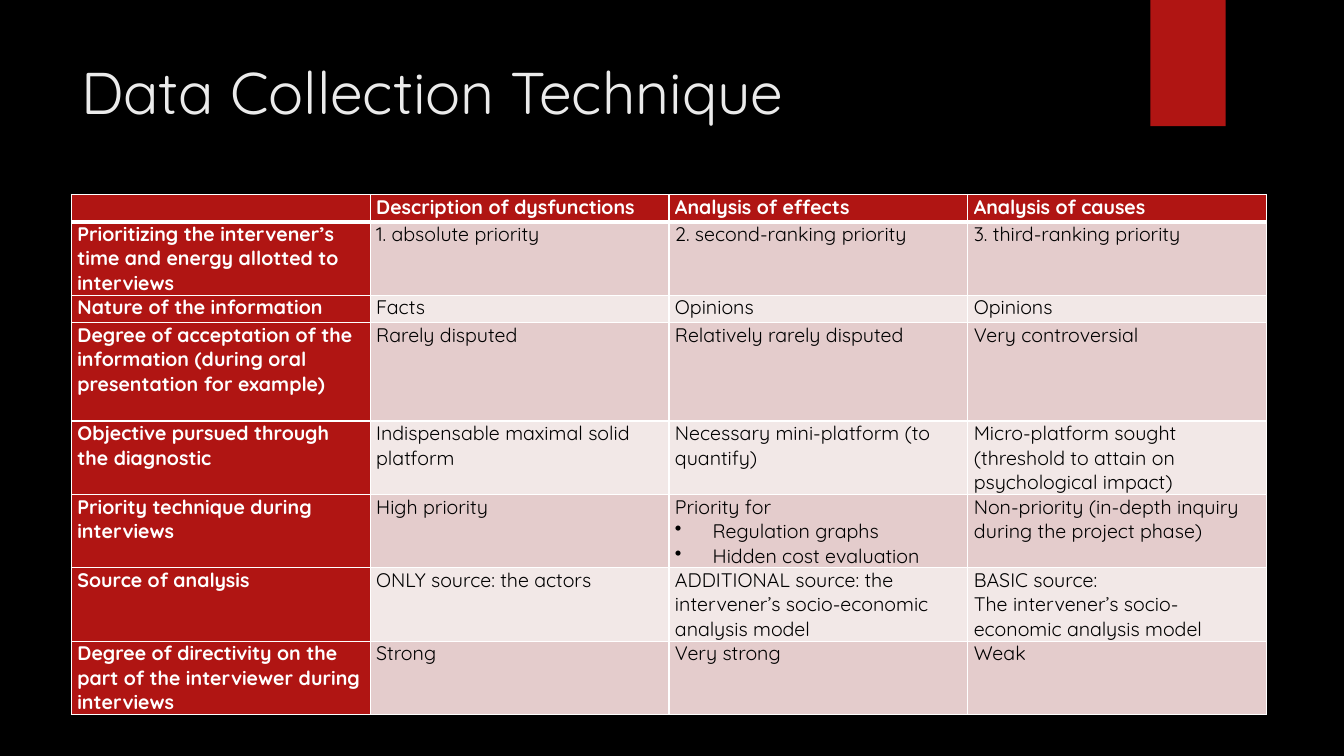
"""Builds the data collection technique slide."""
from lxml import etree
from pptx import Presentation
from pptx import util as u
from pptx.dml.color import RGBColor
from pptx.enum import shapes, text
from pptx.oxml import ns

FONT = "Quicksand"
RED, WHITE = "B01513", "FFFFFF"
BANDS = ("E4CCCC", "F2E8E7")
BULLET = "• "
ROW_HEIGHTS = (0.69, 1.85, 0.69, 2.48, 1.85, 1.85, 1.85, 1.85)
ROWS = (
    ("", "Description of dysfunctions", "Analysis of effects", "Analysis of causes"),
    ("Prioritizing the intervener’s time and energy allotted to interviews",
     "1. absolute priority", "2. second-ranking priority", "3. third-ranking priority"),
    ("Nature of the information", "Facts", "Opinions", "Opinions"),
    ("Degree of acceptation of the information (during oral presentation for example)",
     "Rarely disputed", "Relatively rarely disputed", "Very controversial"),
    ("Objective pursued through the diagnostic", "Indispensable maximal solid platform",
     "Necessary mini-platform (to quantify)",
     "Micro-platform sought (threshold to attain on psychological impact)"),
    ("Priority technique during interviews", "High priority",
     "Priority for\n• Regulation graphs\n• Hidden cost evaluation",
     "Non-priority (in-depth inquiry during the project phase)"),
    ("Source of analysis", "ONLY source: the actors",
     "ADDITIONAL source: the intervener’s socio-economic analysis model",
     "BASIC source:\nThe intervener’s socio-economic analysis model"),
    ("Degree of directivity on the part of the interviewer during interviews",
     "Strong", "Very strong", "Weak"),
)


def paint(fill, color):
    """Give a fill one solid colour."""
    fill.solid()
    fill.fore_color.rgb = RGBColor.from_string(color)


def add_run(p, words, size, color, bold=False):
    """Add one formatted run to a paragraph."""
    r = p.add_run()
    r.text = words
    r.font.name, r.font.size, r.font.bold = FONT, u.Pt(size), bold
    r.font.color.rgb = RGBColor.from_string(color)


def add_bullet(p):
    """Give a paragraph a hanging bullet."""
    pPr = p._p.get_or_add_pPr()
    pPr.set("marL", str(u.Cm(0.95)))
    pPr.set("indent", str(u.Cm(-0.95)))
    etree.SubElement(pPr, ns.qn("a:buChar"), char="•")


def add_borders(cell, top, bottom):
    """Draw white borders round a cell, with top and bottom widths in points."""
    tcPr = cell._tc.get_or_add_tcPr()
    for side, width in (("L", 1), ("R", 1), ("T", top), ("B", bottom)):
        ln = etree.SubElement(tcPr, ns.qn(f"a:ln{side}"), w=str(u.Pt(width)))
        solid = etree.SubElement(ln, ns.qn("a:solidFill"))
        etree.SubElement(solid, ns.qn("a:srgbClr"), val=WHITE)


def fill_cell(cell, words, row, col):
    """Write and style one table cell."""
    heading = row == 0 or col == 0
    add_borders(cell, 3 if row == 1 else 1, 3 if row == 0 else 1)
    paint(cell.fill, RED if heading else BANDS[(row - 1) % 2])
    cell.margin_left = cell.margin_right = u.Cm(0.15)
    cell.margin_top = cell.margin_bottom = 0
    tf = cell.text_frame
    if not words:
        etree.SubElement(tf.paragraphs[0]._p, ns.qn("a:endParaRPr"), sz="1400")
        return
    for i, line in enumerate(words.split("\n")):
        p = tf.add_paragraph() if i else tf.paragraphs[0]
        if line.startswith(BULLET):
            add_bullet(p)
        add_run(p, line.removeprefix(BULLET), 14, WHITE if heading else "000000", heading)


def add_comparison(s, left, top, width):
    """Add the comparison table."""
    frame = s.shapes.add_table(len(ROWS), len(ROWS[0]), u.Cm(left), u.Cm(top),
                               u.Cm(width), u.Cm(sum(ROW_HEIGHTS)))
    table = frame.table
    table.first_col = True
    for column in table.columns:
        column.width = u.Cm(width / len(ROWS[0]))
    for i, (height, words) in enumerate(zip(ROW_HEIGHTS, ROWS)):
        table.rows[i].height = u.Cm(height)
        for j, cell_words in enumerate(words):
            fill_cell(table.cell(i, j), cell_words, i, j)


def add_title(s, left, top, width, height):
    """Add the slide title."""
    sp = s.shapes.add_textbox(u.Cm(left), u.Cm(top), u.Cm(width), u.Cm(height))
    tf = sp.text_frame
    tf.word_wrap = True
    tf.vertical_anchor = text.MSO_ANCHOR.MIDDLE
    add_run(tf.paragraphs[0], "Data Collection Technique", 42, "EBEBEB")


def add_ribbon(s, left, top, width, height):
    """Add the red ribbon at the top edge."""
    sp = s.shapes.add_shape(shapes.MSO_SHAPE.RECTANGLE, u.Cm(left), u.Cm(top),
                            u.Cm(width), u.Cm(height))
    sp.shadow.inherit = False
    paint(sp.fill, RED)
    sp.line.fill.background()


def main():
    """Build and save the slide."""
    prs = Presentation()
    prs.slide_width, prs.slide_height = u.Cm(33.87), u.Cm(19.05)
    s = prs.slides.add_slide(prs.slide_layouts[6])
    paint(s.background.fill, "000000")
    add_ribbon(s, 28.99, 0, 1.9, 3.18)
    add_title(s, 1.8, 1.27, 26.14, 2.06)
    add_comparison(s, 1.8, 4.9, 30.12)
    prs.save("out.pptx")


if __name__ == "__main__":
    main()
